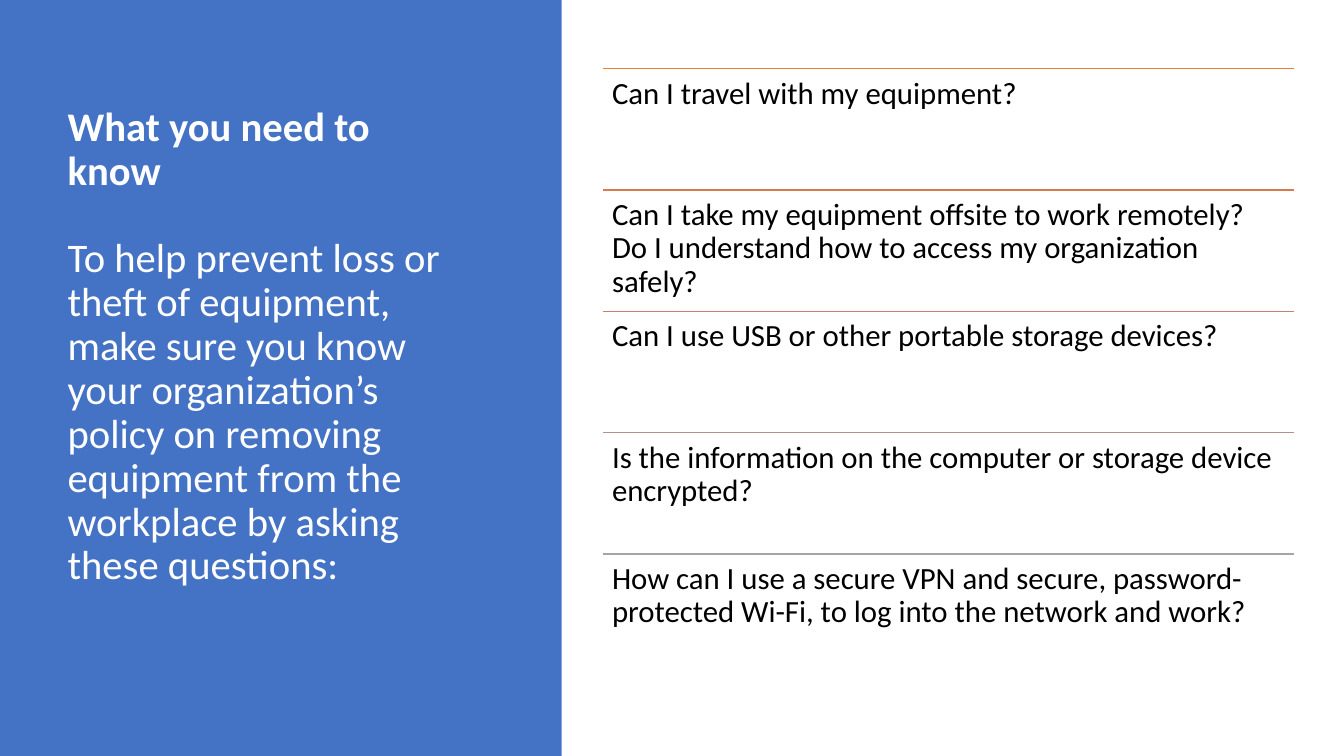
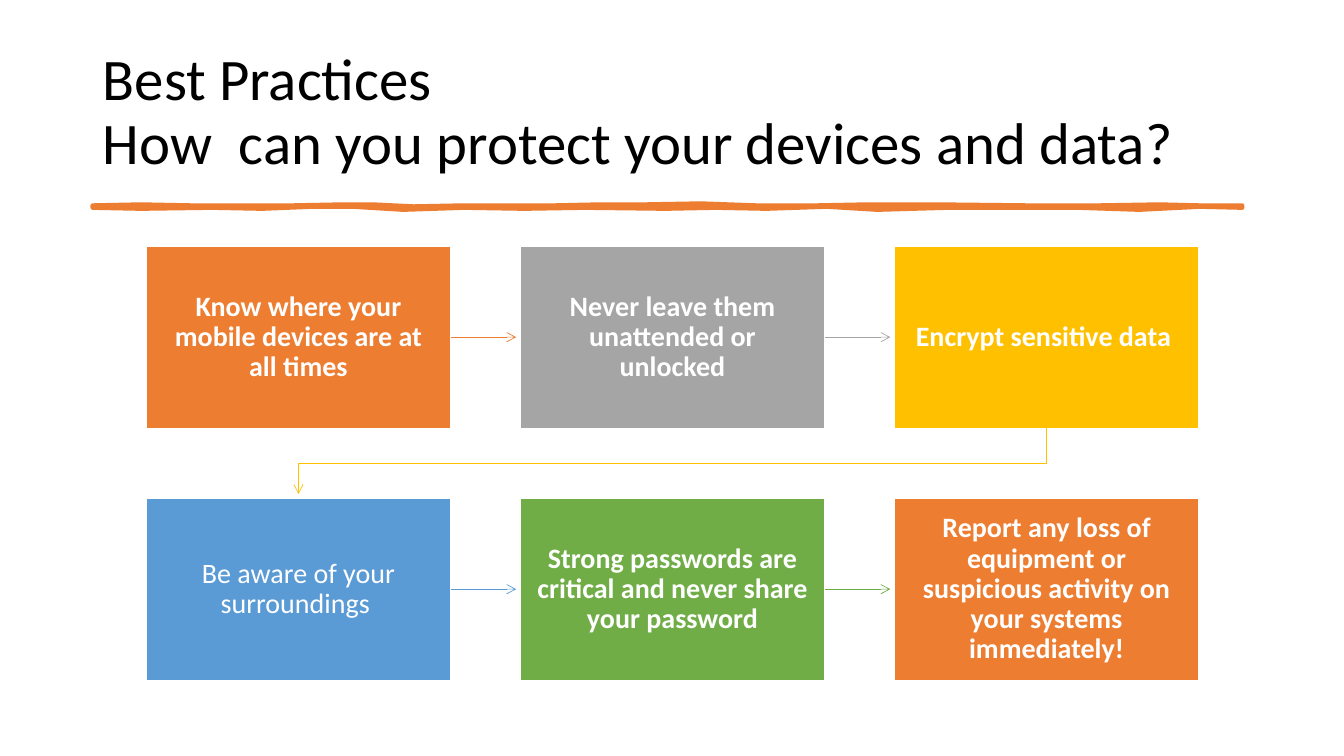
from lxml import etree
from pptx import Presentation
from pptx.dml.color import RGBColor
from pptx.enum.shapes import MSO_CONNECTOR, MSO_SHAPE
from pptx.enum.text import MSO_ANCHOR, MSO_AUTO_SIZE, PP_ALIGN
from pptx.oxml.ns import qn
from pptx.util import Inches, Pt

RECTANGLE, STRAIGHT = MSO_SHAPE.RECTANGLE, MSO_CONNECTOR.STRAIGHT
LEFT, CENTER = PP_ALIGN.LEFT, PP_ALIGN.CENTER
TOP, MIDDLE = MSO_ANCHOR.TOP, MSO_ANCHOR.MIDDLE

WHITE = RGBColor(0xFF, 0xFF, 0xFF)
BLACK = RGBColor(0x00, 0x00, 0x00)
BLUE = RGBColor(0x44, 0x72, 0xC4)
ORANGE = RGBColor(0xED, 0x7D, 0x31)
GRAY = RGBColor(0xA5, 0xA5, 0xA5)
GOLD = RGBColor(0xFF, 0xC0, 0x00)
SKY = RGBColor(0x5B, 0x9B, 0xD5)
GREEN = RGBColor(0x70, 0xAD, 0x47)

FONT = "Calibri"
SLIDE_WIDTH, SLIDE_HEIGHT = 13.33, 7.5

# Each text is a list of (paragraph, bold)
KNOW_TITLE = [
    ("What you need to know", True),
    ("To help prevent loss or theft of equipment, make sure you know your "
     "organization’s policy on removing equipment from the workplace by "
     "asking these questions:", False),
]
QUESTIONS = [
    ("Can I travel with my equipment?", ORANGE),
    ("Can I take my equipment offsite to work remotely? Do I understand how "
     "to access my organization safely?", RGBColor(0xD8, 0x7A, 0x51)),
    ("Can I use USB or other portable storage devices?",
     RGBColor(0xC4, 0x81, 0x70)),
    ("Is the information on the computer or storage device encrypted?",
     RGBColor(0xB4, 0x90, 0x8B)),
    ("How can I use a secure VPN and secure, password-protected Wi-Fi, to "
     "log into the network and work? ", GRAY),
]
QUESTION_LEFT, QUESTION_TOP = 5.98, 0.68
QUESTION_WIDTH, QUESTION_BOTTOM = 6.85, 6.7
QUESTION_PITCH = (QUESTION_BOTTOM - QUESTION_TOP) / len(QUESTIONS)

PRACTICES_TITLE = [
    ("Best Practices", False),
    ("How  can you protect your devices and data?", False),
]
PRACTICES = [
    ("Know where your mobile devices are at all times", True, ORANGE),
    ("Never leave them unattended or unlocked", True, GRAY),
    ("Encrypt sensitive data ", True, GOLD),
    ("Be aware of your surroundings ", False, SKY),
    ("Strong passwords are critical and never share your password", True,
     GREEN),
    ("Report any loss of equipment or suspicious activity on your systems "
     "immediately!", True, ORANGE),
]
COLUMNS = 3
GRID_LEFT, GRID_TOP = 1.45, 2.44
BOX_WIDTH, BOX_HEIGHT = 3.02, 1.81
COLUMN_PITCH, ROW_PITCH = 3.71, 2.5
ARROW_GAP = 0.04

# Outline of the brush stroke: (x, y) along each edge
STROKE_TOP = [
    (0.92, 2.04), (1.4, 2.03), (1.9, 2.04), (2.3, 2.04), (2.9, 2.04),
    (3.4, 2.03), (3.7, 2.03), (4.1, 2.05), (4.6, 2.04), (5.5, 2.04),
    (5.95, 2.03), (6.4, 2.03), (6.95, 2.02), (7.5, 2.04), (8.1, 2.04),
    (8.6, 2.03), (9.3, 2.03), (10.2, 2.04), (10.9, 2.04), (11.5, 2.03),
    (11.9, 2.04), (12.32, 2.04)]
STROKE_BOTTOM = [
    (12.32, 2.06), (11.9, 2.05), (11.3, 2.08), (10.7, 2.06), (10.0, 2.06),
    (9.4, 2.06), (8.7, 2.08), (8.2, 2.05), (7.6, 2.07), (7.1, 2.06),
    (6.6, 2.07), (5.8, 2.06), (5.2, 2.07), (4.6, 2.06), (4.0, 2.08),
    (3.5, 2.05), (3.1, 2.05), (2.6, 2.07), (2.1, 2.06), (1.4, 2.07),
    (0.92, 2.06)]


def write(frame, paragraphs, size, color, align=LEFT, anchor=TOP,
          insets=(0.1, 0.05), gap=0):
    frame.word_wrap = True
    frame.auto_size = MSO_AUTO_SIZE.NONE
    frame.vertical_anchor = anchor
    frame.margin_left = frame.margin_right = Inches(insets[0])
    frame.margin_top = frame.margin_bottom = Inches(insets[1])
    for index, (text, bold) in enumerate(paragraphs):
        paragraph = frame.add_paragraph() if index else frame.paragraphs[0]
        paragraph.alignment = align
        paragraph.line_spacing = 0.9
        paragraph.space_before = Pt(gap if index else 0)
        run = paragraph.add_run()
        run.text = text
        font = {"name": FONT, "size": Pt(size), "bold": bold}
        for name, value in font.items():
            setattr(run.font, name, value)
        run.font.color.rgb = color


def add_titled_slide(presentation, title, box, size, color, gap=0):
    slide = presentation.slides.add_slide(presentation.slide_layouts[5])
    shape = slide.shapes.title
    for name, value in zip(("left", "top", "width", "height"), box):
        setattr(shape, name, Inches(value))
    write(shape.text_frame, title, size, color, anchor=MIDDLE, gap=gap)
    return slide


def add_box(slide, left, top, width, height, fill):
    shape = slide.shapes.add_shape(
        RECTANGLE, *map(Inches, (left, top, width, height)))
    shape.shadow.inherit = False
    shape.fill.solid()
    shape.fill.fore_color.rgb = fill
    shape.line.fill.background()
    return shape


def add_line(slide, start, end, color, width):
    line = slide.shapes.add_connector(
        STRAIGHT, *map(Inches, (*start, *end)))
    line.line.color.rgb = color
    line.line.width = Pt(width)
    etree.SubElement(line._element.spPr, qn("a:effectLst"))
    return line


def add_outline(slide, points, color, width, close):
    start, *others = [(Inches(x), Inches(y)) for x, y in points]
    builder = slide.shapes.build_freeform(*start)
    builder.add_line_segments(others, close=close)
    shape = builder.convert_to_shape()
    shape.shadow.inherit = False
    shape.line.color.rgb = color
    shape.line.width = Pt(width)
    etree.SubElement(shape.line._get_or_add_ln(), qn("a:round"))
    return shape


def add_arrowhead(shape):
    etree.SubElement(shape.line._get_or_add_ln(), qn("a:tailEnd"),
                     type="arrow")


def build_questions(presentation):
    slide = add_titled_slide(presentation, KNOW_TITLE,
                             (0.57, 0.66, 4.16, 5.58), 29, WHITE, gap=31)
    panel = add_box(slide, 0, 0, 5.57, SLIDE_HEIGHT, BLUE)
    slide.shapes._spTree.insert(2, panel._element)  # behind the title
    for row, (question, color) in enumerate(QUESTIONS):
        top = QUESTION_TOP + row * QUESTION_PITCH
        add_line(slide, (QUESTION_LEFT, top),
                 (QUESTION_LEFT + QUESTION_WIDTH, top), color, 1)
        box = slide.shapes.add_textbox(*map(Inches, (
            QUESTION_LEFT, top, QUESTION_WIDTH, QUESTION_PITCH)))
        write(box.text_frame, [(question, False)], 22, BLACK,
              insets=(0.09, 0.09))


def build_practices(presentation):
    slide = add_titled_slide(presentation, PRACTICES_TITLE,
                             (0.92, 0.4, 11.5, 1.45), 42, BLACK)
    stroke = add_outline(slide, STROKE_TOP + STROKE_BOTTOM, ORANGE, 3.25, True)
    stroke.fill.solid()
    stroke.fill.fore_color.rgb = ORANGE

    for index, (practice, bold, color) in enumerate(PRACTICES):
        row, column = divmod(index, COLUMNS)
        left = GRID_LEFT + column * COLUMN_PITCH
        top = GRID_TOP + row * ROW_PITCH
        box = add_box(slide, left, top, BOX_WIDTH, BOX_HEIGHT, color)
        box.line.color.rgb = WHITE
        box.line.width = Pt(1)
        write(box.text_frame, [(practice, bold)], 20, WHITE, CENTER, MIDDLE,
              (0.15, 0.16))
        if index == len(PRACTICES) - 1:
            continue
        if column < COLUMNS - 1:
            middle = top + BOX_HEIGHT / 2
            arrow = add_line(slide, (left + BOX_WIDTH, middle),
                             (left + COLUMN_PITCH - ARROW_GAP, middle),
                             color, 0.5)
        else:
            start_x = left + BOX_WIDTH / 2
            end_x = GRID_LEFT + BOX_WIDTH / 2
            bottom, next_top = top + BOX_HEIGHT, top + ROW_PITCH
            turn = (bottom + next_top) / 2
            arrow = add_outline(
                slide, [(start_x, bottom), (start_x, turn), (end_x, turn),
                        (end_x, next_top - ARROW_GAP)], color, 0.5, False)
            arrow.fill.background()
        add_arrowhead(arrow)


def main():
    presentation = Presentation()
    presentation.slide_width = Inches(SLIDE_WIDTH)
    presentation.slide_height = Inches(SLIDE_HEIGHT)
    build_questions(presentation)
    build_practices(presentation)
    presentation.save("out.pptx")


if __name__ == "__main__":
    main()
